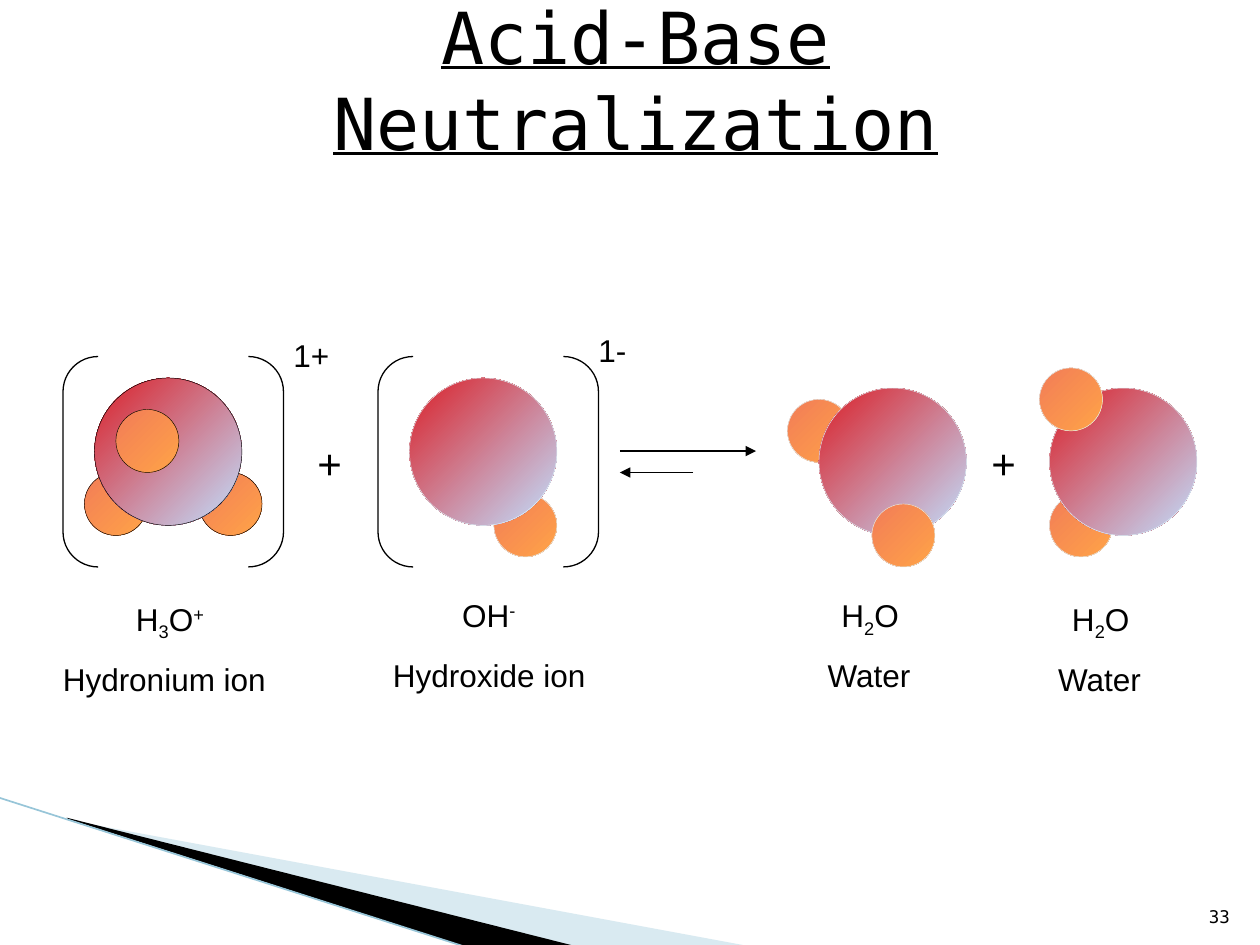
from lxml import etree
from pptx import Presentation
from pptx.dml.color import RGBColor
from pptx.enum.shapes import MSO_CONNECTOR, MSO_SHAPE
from pptx.enum.text import MSO_ANCHOR, MSO_AUTO_SIZE, PP_ALIGN
from pptx.oxml.ns import qn
from pptx.util import Inches, Pt

OVAL = MSO_SHAPE.OVAL
BRACKET = MSO_SHAPE.DOUBLE_BRACKET
STRAIGHT = MSO_CONNECTOR.STRAIGHT
TOP, MIDDLE, BOTTOM = MSO_ANCHOR.TOP, MSO_ANCHOR.MIDDLE, MSO_ANCHOR.BOTTOM
LEFT, CENTER, RIGHT = PP_ALIGN.LEFT, PP_ALIGN.CENTER, PP_ALIGN.RIGHT
GROW = MSO_AUTO_SIZE.SHAPE_TO_FIT_TEXT

BLACK = RGBColor(0x00, 0x00, 0x00)
PALE = RGBColor(0xDE, 0xF5, 0xFA)
MIST = RGBColor(0xA0, 0xCB, 0xDC)
TEAL = RGBColor(0x97, 0xC5, 0xD8)
RED = RGBColor(0xDA, 0x1F, 0x28)
BLUE = RGBColor(0xC1, 0xE0, 0xFF)
CORAL = RGBColor(0xF2, 0x7D, 0x58)
ORANGE = RGBColor(0xFF, 0xA3, 0x47)

# Atom kinds: diameter and gradient colours
OXYGEN = (1.17, (RED, BLUE))
HYDROGEN = (0.5, (CORAL, ORANGE))
BASE = {"_": -25000, "^": 30000}


class Board:
    sans = "Arial"
    mono = "DejaVu Sans Mono"

    def __init__(self, slide):
        self.slide = slide
        self.shapes = slide.shapes

    def wedge(self, points, color, alpha=None):
        start, *rest = [(Inches(x), Inches(y)) for x, y in points]
        form = self.shapes.build_freeform(*start)
        form.add_line_segments(rest, close=True)
        shape = form.convert_to_shape()
        shape.shadow.inherit = False
        shape.line.fill.background()
        shape.fill.solid()
        shape.fill.fore_color.rgb = color
        if alpha:
            node = shape.fill._xPr.find(".//" + qn("a:srgbClr"))
            etree.SubElement(node, qn("a:alpha"), val=str(alpha * 1000))

    def line(self, start, end, color=BLACK, width=0.75, arrow=False):
        ends = [Inches(v) for v in (*start, *end)]
        line = self.shapes.add_connector(STRAIGHT, *ends)
        line.line.color.rgb = color
        line.line.width = Pt(width)
        if arrow:
            etree.SubElement(line.line._get_or_add_ln(), qn("a:tailEnd"), type="triangle")
        etree.SubElement(line._element.spPr, qn("a:effectLst"))

    def atom(self, group, kind, x, y, edge):
        size, colors = kind
        ball = group.shapes.add_shape(OVAL, *map(Inches, (x, y, size, size)))
        ball.shadow.inherit = False
        ball.fill.gradient()
        ball.fill.gradient_angle = 315
        for stop, color in zip(ball.fill.gradient_stops, colors):
            stop.color.rgb = color
        ball.line.color.rgb = edge
        ball.line.width = Pt(0.25)

    def bracket(self, group, x):
        pair = group.shapes.add_shape(BRACKET, *map(Inches, (x, 2.83, 1.75, 1.67)))
        pair.shadow.inherit = False
        pair.adjustments[0] = 0.167
        pair.fill.background()
        pair.line.color.rgb = BLACK
        pair.line.width = Pt(0.75)

    def molecule(self, atoms, edge=PALE, frame=None):
        group = self.shapes.add_group_shape()
        for kind, x, y in atoms:
            self.atom(group, kind, x, y, edge)
        if frame is not None:
            self.bracket(group, frame)

    def text(self, runs, x, y, w, h, size=18, face=sans, align=LEFT,
             anchor=TOP, wrap=False, under=False):
        """Runs that begin with _ or ^ are set below or above the line."""
        box = self.shapes.add_textbox(*map(Inches, (x, y, w, h)))
        frame = box.text_frame
        frame.word_wrap = wrap
        frame.vertical_anchor = anchor
        if not wrap:
            frame.auto_size = GROW
        para = frame.paragraphs[0]
        para.alignment = align
        style = {"name": face, "size": Pt(size), "underline": under}
        for part in runs:
            run = para.add_run()
            shift = BASE.get(part[0])
            run.text = part[1:] if shift else part
            for key, value in style.items():
                setattr(run.font, key, value)
            run.font.color.rgb = BLACK
            if shift:
                run._r.get_or_add_rPr().set("baseline", str(shift))


def main():
    deck = Presentation()
    deck.slide_width, deck.slide_height = Inches(10), Inches(7.5)
    board = Board(deck.slides.add_slide(deck.slide_layouts[6]))

    # Corner decoration
    board.wedge([(0.55, 6.51), (5.95, 7.51), (4.56, 7.51), (0.55, 6.5)], MIST, 40)
    board.wedge([(0.53, 6.49), (4.57, 7.51), (3.72, 7.52), (0.54, 6.5)], BLACK)
    board.line((-0.01, 6.33), (3.71, 7.52), TEAL, 0.95)

    # Page number and title
    board.text(["33"], 9.46, 7.01, 0.4, 0.4, 10, Board.mono, RIGHT, BOTTOM, True)
    board.text(["Acid-Base Neutralization"], 0.92, 0, 8.25, 1.25, 41,
               Board.mono, CENTER, MIDDLE, True, True)

    # Molecules, atoms from back to front
    board.molecule([(HYDROGEN, 6.25, 3.17), (OXYGEN, 6.5, 3.08), (HYDROGEN, 6.92, 4)])
    board.molecule([(HYDROGEN, 8.33, 3.92), (OXYGEN, 8.33, 3.08), (HYDROGEN, 8.25, 2.92)])
    board.molecule([(HYDROGEN, 0.67, 3.75), (HYDROGEN, 1.58, 3.75),
                    (OXYGEN, 0.75, 3), (HYDROGEN, 0.92, 3.25)], BLACK, 0.5)
    board.molecule([(HYDROGEN, 3.92, 3.92), (OXYGEN, 3.25, 3)], frame=3)

    # Reaction arrows
    board.line((4.92, 3.58), (6, 3.58), arrow=True)
    board.line((5.5, 3.75), (4.92, 3.75), arrow=True)

    # Charges and plus signs
    board.text(["1+"], 2.23, 2.62, 0.49, 0.4)
    board.text(["1-"], 4.65, 2.58, 0.42, 0.4)
    for x in (2.42, 7.77):
        board.text(["+"], x, 3.42, 0.4, 0.5, 24)

    # Names and formulas: top, then left and width of each
    water = ["H", "_2", "O"]
    labels = [
        (4.71, "Hydronium ion", 0.4, 1.81, ["H", "_3", "O", "^+"], 0.98, 0.77),
        (4.68, "Hydroxide ion", 3.02, 1.73, ["OH", "^-"], 3.57, 0.63),
        (4.68, "Water", 6.47, 0.87, water, 6.58, 0.67),
        (4.71, "Water", 8.3, 0.87, water, 8.41, 0.67),
    ]
    for top, name, left, width, formula, start, span in labels:
        board.text([name], left, top + 0.48, width, 0.4)
        board.text(formula, start, top, span, 0.4)

    deck.save("out.pptx")


if __name__ == "__main__":
    main()
